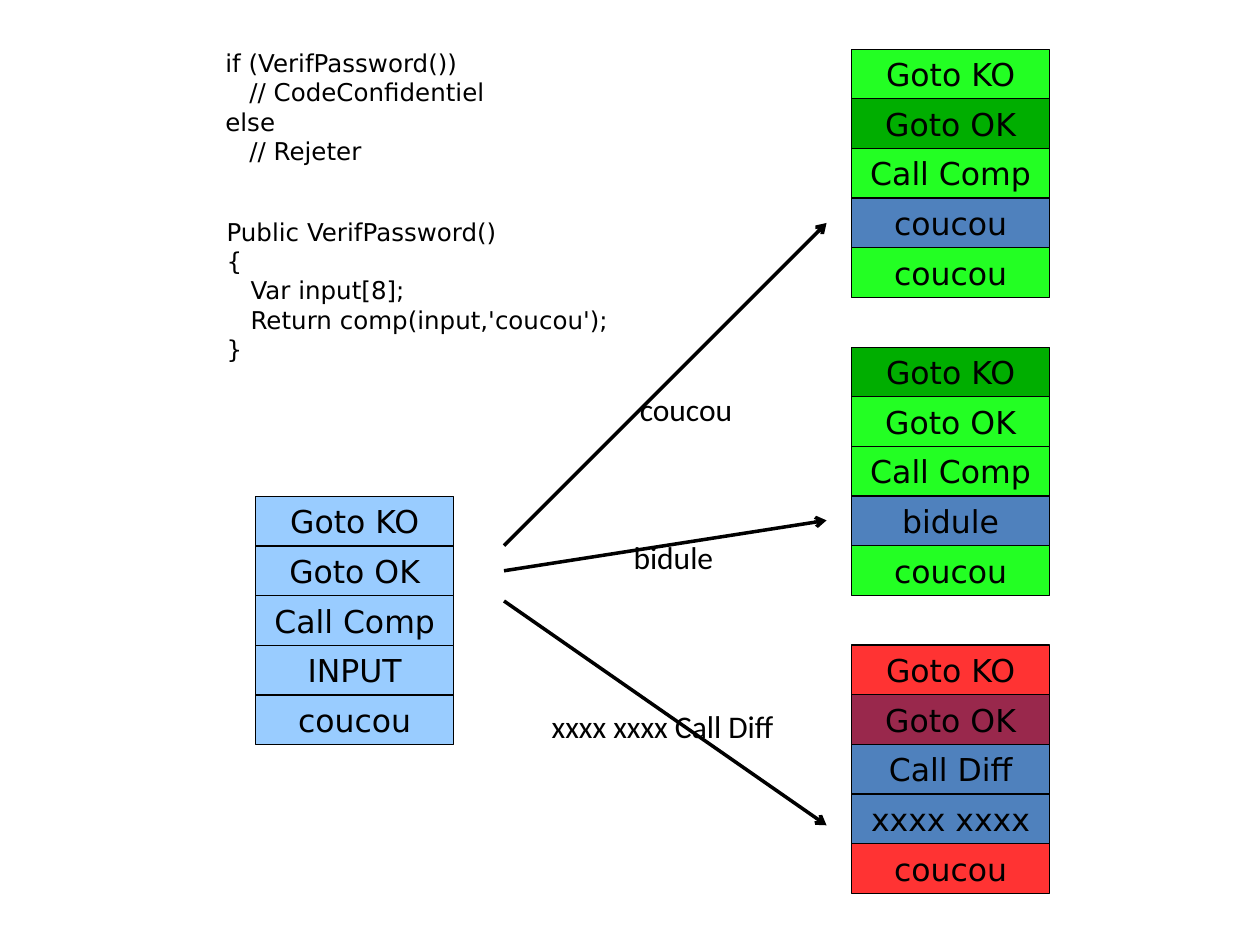
from lxml import etree
from pptx import Presentation
from pptx.dml.color import RGBColor
from pptx.enum.shapes import MSO_CONNECTOR as Connector, MSO_SHAPE as Shape
from pptx.enum.text import MSO_ANCHOR as Anchor, MSO_AUTO_SIZE as AutoSize, PP_ALIGN as Align
from pptx.oxml.ns import qn
from pptx.util import Inches, Pt

BLACK = RGBColor(0x00, 0x00, 0x00)
SKY = RGBColor(0x99, 0xCC, 0xFF)
BLUE = RGBColor(0x4F, 0x81, 0xBD)
LIME = RGBColor(0x23, 0xFF, 0x23)
GREEN = RGBColor(0x00, 0xAE, 0x00)
RED = RGBColor(0xFF, 0x33, 0x33)
PLUM = RGBColor(0x99, 0x28, 0x4C)

CODE_FONT = {"name": "DejaVu Sans", "size": Pt(14)}
CELL_FONT = {"name": "DejaVu Sans", "size": Pt(18)}
LABEL_FONT = {"name": "Calibri", "size": Pt(18)}
CODE_INDENT = Inches(0.19)
STACK_WIDTH, STACK_HEIGHT, STACK_STEP = 1.57, 1.97, 2.365

CALL_CODE = [
    (0, "if (VerifPassword())"),
    (1, "// CodeConfidentiel"),
    (0, "else"),
    (1, "// Rejeter"),
]
CHECK_CODE = [
    (0, "Public VerifPassword()"),
    (0, "{"),
    (1, "Var input[8];"),
    (1, "Return comp(input,'coucou');"),
    (0, "}"),
]
INPUT_STACK = [
    (name, SKY) for name in ("Goto KO", "Goto OK", "Call Comp", "INPUT", "coucou")
]
RESULT_STACKS = [
    [("Goto KO", LIME), ("Goto OK", GREEN), ("Call Comp", LIME),
     ("coucou", BLUE), ("coucou", LIME)],
    [("Goto KO", GREEN), ("Goto OK", LIME), ("Call Comp", LIME),
     ("bidule", BLUE), ("coucou", LIME)],
    [("Goto KO", RED), ("Goto OK", PLUM), ("Call Diff", BLUE),
     ("xxxx xxxx", BLUE), ("coucou", RED)],
]
ROUTES = [
    (4.33, 1.77, "coucou", (4.98, 3.05, 0.94, 0.4)),
    (4.53, 4.13, "bidule", (4.93, 4.22, 0.84, 0.4)),
    (4.77, 6.55, "xxxx xxxx Call Diff", (4.28, 5.56, 1.98, 0.4)),
]


def write(para, text, font):
    span = para.add_run()
    span.text = text
    span.font.color.rgb = BLACK
    for key, value in font.items():
        setattr(span.font, key, value)


def add_text(page, box, lines, font, wrap):
    frame = page.shapes.add_textbox(*map(Inches, box)).text_frame
    frame.word_wrap = wrap
    frame.auto_size = AutoSize.SHAPE_TO_FIT_TEXT
    for index, (level, text) in enumerate(lines):
        para = frame.add_paragraph() if index else frame.paragraphs[0]
        if level:
            para._p.get_or_add_pPr().set("marL", str(level * CODE_INDENT))
        write(para, text, font)


def add_stack(page, box, cells):
    left, top, width, height = box
    row = height / len(cells)
    for index, (text, color) in enumerate(cells):
        cell = page.shapes.add_shape(
            Shape.RECTANGLE, Inches(left), Inches(top + index * row),
            Inches(width), Inches(row))
        cell.shadow.inherit = False
        cell.fill.solid()
        cell.fill.fore_color.rgb = color
        cell.line.color.rgb = BLACK
        cell.line.width = Pt(0)
        frame = cell.text_frame
        frame.vertical_anchor = Anchor.MIDDLE
        frame.paragraphs[0].alignment = Align.CENTER
        write(frame.paragraphs[0], text, CELL_FONT)


def add_route(page, start, end, label, label_box):
    arrow = page.shapes.add_connector(
        Connector.STRAIGHT, *map(Inches, (*start, *end)))
    arrow.line.color.rgb = BLACK
    arrow.line.width = Pt(0)
    etree.SubElement(arrow.line._get_or_add_ln(), qn("a:tailEnd"), type="arrow")
    etree.SubElement(arrow._element.spPr, qn("a:effectLst"))
    add_text(page, label_box, [(0, label)], LABEL_FONT, False)


def main():
    deck = Presentation()
    deck.slide_width, deck.slide_height = Inches(10), Inches(7.5)
    page = deck.slides.add_slide(deck.slide_layouts[6])
    add_text(page, (1.69, 0.33, 2.31, 1.05), CALL_CODE, CODE_FONT, True)
    add_text(page, (1.7, 1.67, 3.29, 1.28), CHECK_CODE, CODE_FONT, True)
    add_stack(page, (2.03, 3.94, STACK_WIDTH, STACK_HEIGHT), INPUT_STACK)
    for index, cells in enumerate(RESULT_STACKS):
        top = 0.39 + index * STACK_STEP
        add_stack(page, (6.76, top, STACK_WIDTH, STACK_HEIGHT), cells)
    for start_y, end_y, label, label_box in ROUTES:
        add_route(page, (4, start_y), (6.56, end_y), label, label_box)
    deck.save("out.pptx")


if __name__ == "__main__":
    main()
